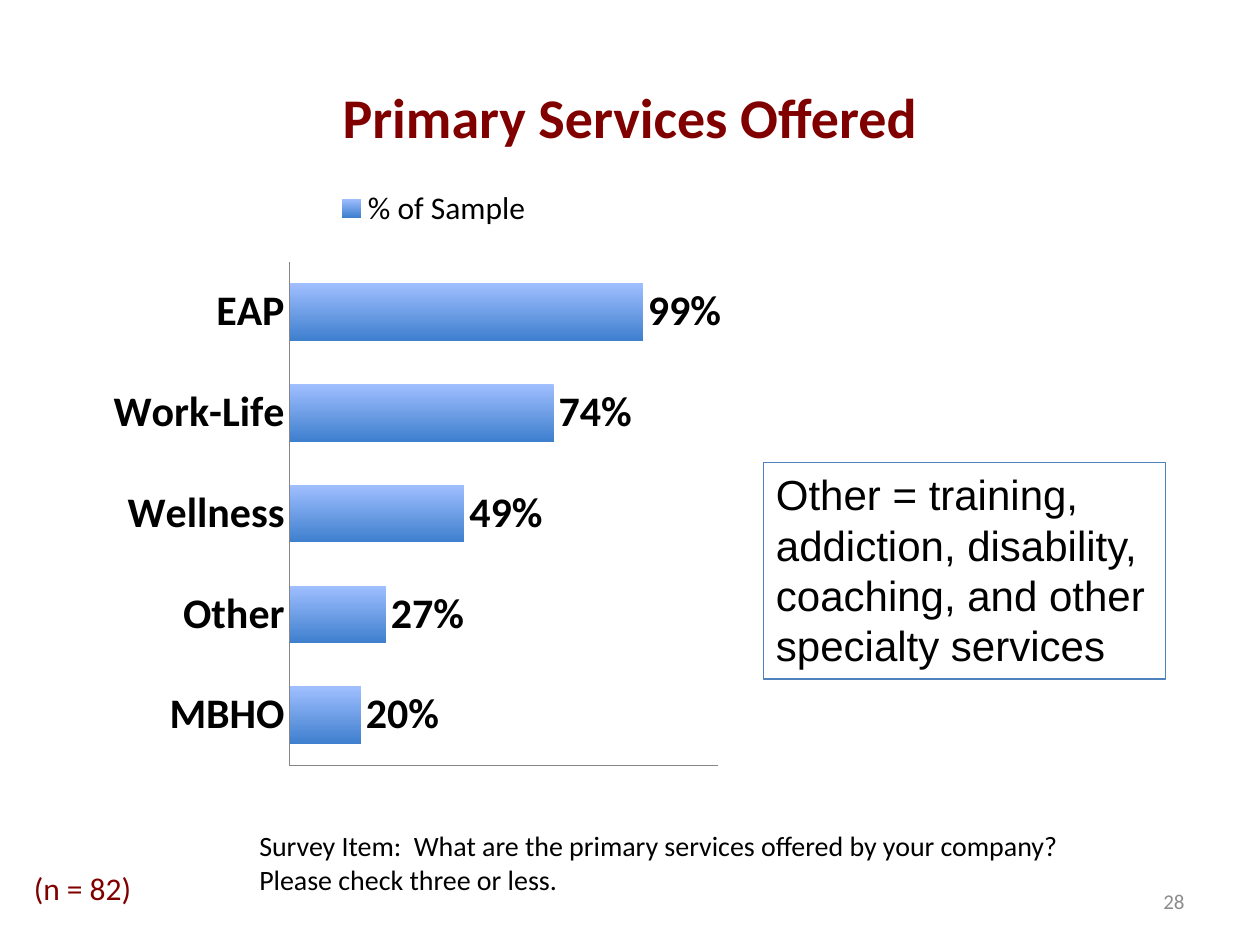
"""Build the survey slide on primary services offered."""
from dataclasses import dataclass
from typing import Optional

from lxml.etree import SubElement
from pptx import Presentation
from pptx.chart.chart import Chart
from pptx.chart.data import CategoryChartData
from pptx.dml.color import RGBColor
from pptx.enum.chart import XL_CHART_TYPE as ChartType
from pptx.enum.chart import XL_LABEL_POSITION as LabelPosition
from pptx.enum.chart import XL_LEGEND_POSITION as LegendPosition
from pptx.enum.chart import XL_TICK_LABEL_POSITION as TickLabels
from pptx.enum.chart import XL_TICK_MARK as TickMark
from pptx.enum.text import MSO_ANCHOR as Anchor
from pptx.enum.text import PP_ALIGN as Align
from pptx.oxml.ns import qn
from pptx.slide import Slide
from pptx.util import Inches, Pt

MAROON = RGBColor(0x80, 0x00, 0x00)
BLACK = RGBColor(0x00, 0x00, 0x00)
PAGE_GRAY = RGBColor(0x8C, 0x8C, 0x8C)
AXIS_GRAY = RGBColor(0x86, 0x86, 0x86)
BLUE = RGBColor(0x4F, 0x81, 0xBD)
BAR_TOP = RGBColor(0xA0, 0xBF, 0xFF)
BAR_BOTTOM = RGBColor(0x3E, 0x7F, 0xCE)

SERVICES = {"MBHO": 0.2, "Other": 0.27, "Wellness": 0.49, "Work-Life": 0.74, "EAP": 0.99}


@dataclass(frozen=True)
class Note:
    lines: tuple[str, ...]
    left: float
    top: float
    width: float
    height: float
    size: int
    color: RGBColor = BLACK
    font: str = "Calibri"
    bold: bool = False
    align: Align = Align.LEFT
    anchor: Anchor = Anchor.TOP
    wrap: bool = False
    border: Optional[RGBColor] = None


NOTES = (
    Note(("Primary Services Offered",), 0.5, 0.3, 9, 1.25, 32, MAROON,
         bold=True, align=Align.CENTER, anchor=Anchor.MIDDLE, wrap=True),
    Note(("28",), 7.17, 6.95, 2.33, 0.4, 12, PAGE_GRAY,
         align=Align.RIGHT, anchor=Anchor.MIDDLE, wrap=True),
    Note(("(n = 82)",), 0.17, 6.85, 1.03, 0.4, 18, MAROON),
    Note(("Survey Item:  What are the primary services offered by your company?",
          "Please check three or less."), 1.96, 6.53, 6.6, 0.64, 16),
    Note(("Other = training,", "addiction, disability,", "coaching, and other",
          "specialty services"), 6.06, 3.67, 3.19, 1.72, 24, font="Arial", border=BLUE),
)


def add_note(slide: Slide, note: Note) -> None:
    """Add a text box with one paragraph per line."""
    shape = slide.shapes.add_textbox(
        Inches(note.left), Inches(note.top), Inches(note.width), Inches(note.height))
    if note.border is not None:
        shape.line.color.rgb = note.border
        shape.line.width = Pt(0.75)
    frame = shape.text_frame
    frame.word_wrap = note.wrap
    frame.vertical_anchor = note.anchor
    for index, line in enumerate(note.lines):
        paragraph = frame.add_paragraph() if index else frame.paragraphs[0]
        paragraph.alignment = note.align
        run = paragraph.add_run()
        run.text = line
        run.font.name = note.font
        run.font.size = Pt(note.size)
        run.font.bold = note.bold
        run.font.color.rgb = note.color


def set_layout(parent, position: int, left: float, top: float, width: float,
               height: float, inner: bool = False) -> None:
    """Place a chart part by fractions of the chart's size."""
    for old_layout in parent.findall(qn("c:layout")):
        parent.remove(old_layout)
    layout = SubElement(parent, qn("c:layout"))
    parent.insert(position, layout)
    manual = SubElement(layout, qn("c:manualLayout"))
    settings = [("layoutTarget", "inner")] if inner else []
    settings += [("xMode", "edge"), ("yMode", "edge"),
                 ("x", left), ("y", top), ("w", width), ("h", height)]
    for name, value in settings:
        SubElement(manual, qn(f"c:{name}")).set("val", str(value))


def style_axes(chart: Chart) -> None:
    """Show plain axis lines and bold category names only."""
    for axis in (chart.category_axis, chart.value_axis):
        axis.has_major_gridlines = False
        axis.major_tick_mark = TickMark.NONE
        axis.minor_tick_mark = TickMark.NONE
        axis.format.line.color.rgb = AXIS_GRAY
        axis.format.line.width = Pt(0.75)
    chart.category_axis.tick_labels.font.size = Pt(24)
    chart.category_axis.tick_labels.font.bold = True
    chart.value_axis.tick_label_position = TickLabels.NONE
    chart.value_axis.minimum_scale = 0
    chart.value_axis.maximum_scale = 1.2


def add_services_chart(slide: Slide) -> None:
    """Add the bar chart of services."""
    data = CategoryChartData(number_format="0%")
    data.categories = list(SERVICES)
    data.add_series("% of Sample", list(SERVICES.values()))
    chart = slide.shapes.add_chart(
        ChartType.BAR_CLUSTERED, Inches(-0.04), Inches(1.37),
        Inches(6.39), Inches(5.65), data).chart
    chart.has_title = False
    chart.font.name = "Calibri"
    chart.font.size = Pt(18)
    chart.font.color.rgb = BLACK
    style_axes(chart)

    plot = chart.plots[0]
    plot.gap_width = 75
    plot.vary_by_categories = False
    fill = plot.series[0].format.fill
    fill.gradient()
    fill.gradient_angle = 270
    for stop, color in zip(fill.gradient_stops, (BAR_TOP, BAR_BOTTOM)):
        stop.color.rgb = color

    labels = plot.series[0].data_labels
    labels.show_value = True
    labels.number_format = "0%"
    labels.number_format_is_linked = False
    labels.position = LabelPosition.OUTSIDE_END
    labels.font.size = Pt(24)
    labels.font.bold = True

    chart.has_legend = True
    chart.legend.position = LegendPosition.TOP
    chart.legend.include_in_layout = False
    chart.legend.font.size = Pt(18)
    set_layout(chart.legend._element, 1, 0.38, 0.01, 0.33, 0.08)
    plot_area = chart._chartSpace.chart.plotArea
    set_layout(plot_area, 0, 0.366, 0.125, 0.532, 0.708, inner=True)


def main() -> None:
    """Build and save the presentation."""
    presentation = Presentation()
    presentation.slide_width = Inches(10)
    presentation.slide_height = Inches(7.5)
    slide = presentation.slides.add_slide(presentation.slide_layouts[6])
    add_services_chart(slide)
    for note in NOTES:
        add_note(slide, note)
    presentation.save("out.pptx")


if __name__ == "__main__":
    main()
